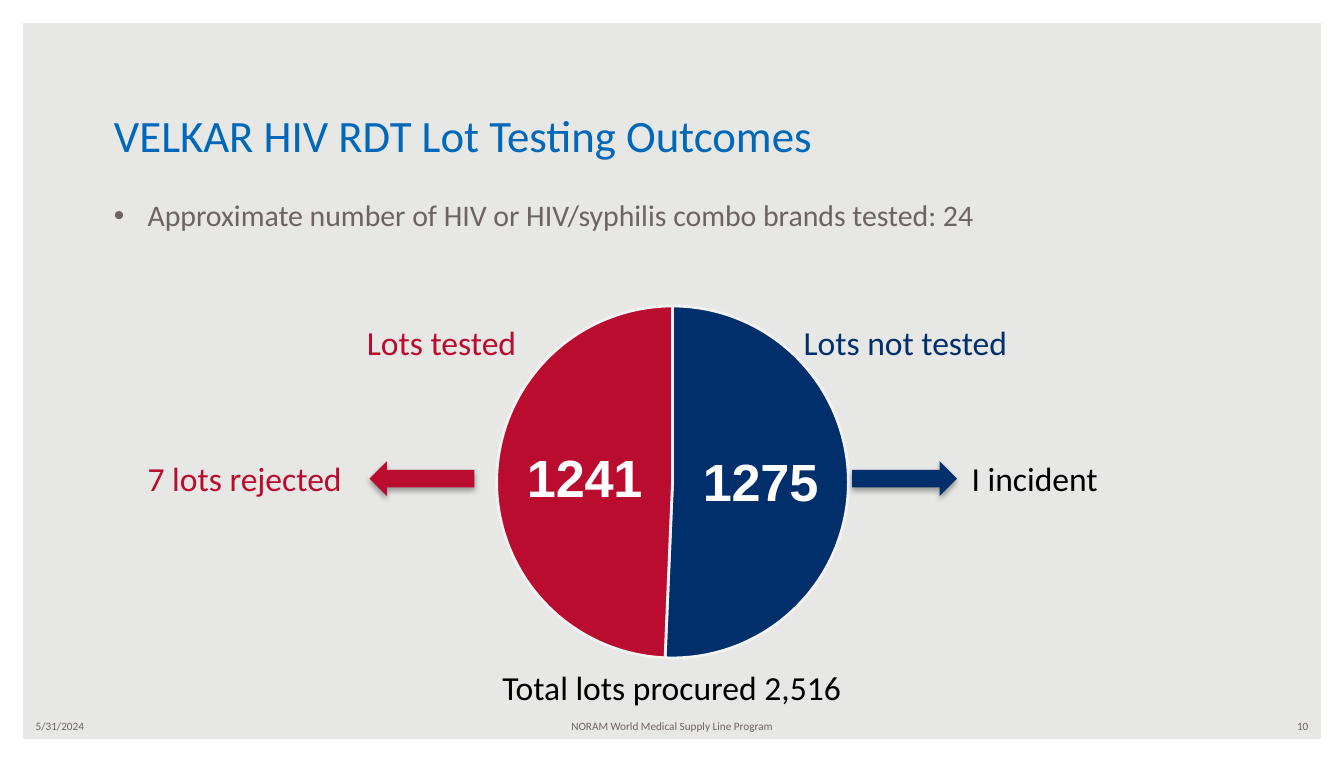
from lxml import etree
from pptx import Presentation
from pptx.chart.data import CategoryChartData
from pptx.dml.color import RGBColor
from pptx.enum.chart import XL_CHART_TYPE as ChartType, XL_LABEL_POSITION as LabelPos
from pptx.enum.shapes import MSO_SHAPE as Shape
from pptx.enum.text import MSO_ANCHOR as Anchor, PP_ALIGN as Align
from pptx.oxml import parse_xml
from pptx.oxml.ns import nsdecls, qn
from pptx.util import Pt

BLUE = RGBColor(0x00, 0x67, 0xB9)
NAVY = RGBColor(0x00, 0x2F, 0x6C)
RED = RGBColor(0xBA, 0x0C, 0x2F)
GREY = RGBColor(0x6C, 0x64, 0x63)
BLACK = RGBColor(0, 0, 0)
WHITE = RGBColor(0xFF, 0xFF, 0xFF)
PALE = RGBColor(0xF2, 0xF2, 0xF2)
BACKGROUND = RGBColor(0xE7, 0xE7, 0xE5)

# Content: lengths in points
WIDTH, HEIGHT = 720, 408
TITLE = "VELKAR HIV RDT Lot Testing Outcomes"
BULLET = "Approximate number of HIV or HIV/syphilis combo brands tested: 24"

LOTS = [("1", 1275, NAVY), ("2", 1241, RED), ("3", None, GREY), ("4", None, BLACK)]
CHART = (189, 138.6, 340.6, 238.3)
PIE_LAYOUT = {"x": 0.226, "y": 0.106, "w": 0.554, "h": 0.791}

# text, left, top, width, colour
CALLOUTS = [
    ("Lots not tested", 423.4, 168.8, 127.4, NAVY),
    ("Lots tested", 189.4, 168.8, 97.2, RED),
    ("7 lots rejected", 72, 241.7, 121, RED),
    ("I incident", 513.4, 241.7, 82, BLACK),
    ("Total lots procured 2,516", 262, 353.3, 201, BLACK),
]

# left, rotation, colour
ARROWS = [(216.7, 90, RED), (475.2, 270, NAVY)]
ARROW_TOP, ARROW_WIDTH, ARROW_HEIGHT = 228.2, 18.7, 56.2

# text, left, width, alignment
FOOTER = [
    ("5/31/2024", 12, 168, Align.LEFT),
    ("NORAM World Medical Supply Line Program", 246, 228, Align.CENTER),
    ("10", 540, 168, Align.RIGHT),
]

SHADOW = f"""<a:effectLst {nsdecls('a')}>
<a:outerShdw blurRad="39370" dist="22860" dir="5400000" rotWithShape="0">
<a:srgbClr val="000000"><a:alpha val="35000"/></a:srgbClr>
</a:outerShdw></a:effectLst>"""


def add_text(page, text, place, size, color, align=Align.LEFT, anchor=Anchor.TOP):
    box = page.shapes.add_textbox(*map(Pt, place))
    frame = box.text_frame
    frame.word_wrap = True
    frame.vertical_anchor = anchor
    frame.text = text
    para = frame.paragraphs[0]
    para.alignment = align
    font = para.runs[0].font
    font.name, font.size, font.color.rgb = "Calibri", Pt(size), color
    return para


def add_filled(page, kind, place, color):
    shape = page.shapes.add_shape(kind, *map(Pt, place))
    shape.shadow.inherit = False
    shape.fill.solid()
    shape.fill.fore_color.rgb = color
    shape.line.fill.background()
    return shape


def add_bullet(para, color):
    props = para._p.get_or_add_pPr()
    props.set("marL", str(Pt(18)))
    props.set("indent", str(-Pt(18)))
    bullet_color = etree.SubElement(props, qn("a:buClr"))
    etree.SubElement(bullet_color, qn("a:srgbClr"), val=str(color))
    etree.SubElement(props, qn("a:buFont"), typeface="Arial")
    etree.SubElement(props, qn("a:buChar"), char="•")


def add_pie(page):
    data = CategoryChartData()
    data.categories = [name for name, _, _ in LOTS]
    data.add_series("Series 1", [count for _, count, _ in LOTS])
    chart = page.shapes.add_chart(ChartType.PIE, *map(Pt, CHART), data).chart
    chart.has_legend = chart.has_title = False
    chart.font.name, chart.font.size = "Arial", Pt(10)
    chart.font.color.rgb = BLACK

    plot = chart.plots[0]
    plot.vary_by_categories = True
    for index, (_, _, color) in enumerate(LOTS):
        look = plot.series[0].points[index].format
        look.fill.solid()
        look.fill.fore_color.rgb = color
        look.line.color.rgb = PALE
        look.line.width = Pt(1.5)

    plot.has_data_labels = True
    labels = plot.data_labels
    labels.show_value = True
    labels.show_percentage = False
    labels.position = LabelPos.CENTER
    font = labels.font
    font.name, font.size, font.bold = "Arial", Pt(28), True
    font.color.rgb = WHITE

    # Fixed pie area inside the chart
    area = chart._chartSpace.chart.plotArea
    for old in area.findall(qn("c:layout")):
        area.remove(old)
    layout = etree.Element(qn("c:layout"))
    manual = etree.SubElement(layout, qn("c:manualLayout"))
    settings = {"layoutTarget": "inner", "xMode": "edge", "yMode": "edge", **PIE_LAYOUT}
    for tag, value in settings.items():
        etree.SubElement(manual, qn(f"c:{tag}"), val=str(value))
    area.insert(0, layout)


def main():
    deck = Presentation()
    deck.slide_width, deck.slide_height = Pt(WIDTH), Pt(HEIGHT)
    page = deck.slides.add_slide(deck.slide_layouts[6])
    page.background.fill.solid()
    page.background.fill.fore_color.rgb = BACKGROUND

    # White border
    border = add_filled(page, Shape.FRAME, (0, 0, WIDTH, HEIGHT), WHITE)
    border.adjustments[0] = 0.03

    # Heading and bullet
    add_text(page, TITLE, (54, 54, 612, 36), 24, BLUE, anchor=Anchor.BOTTOM)
    add_bullet(add_text(page, BULLET, (54, 102, 612, 252), 16, GREY), GREY)

    # Pie with its callouts and arrows
    add_pie(page)
    for text, left, top, width, color in CALLOUTS:
        add_text(page, text, (left, top, width, 29), 18, color)
    for left, rotation, color in ARROWS:
        place = (left, ARROW_TOP, ARROW_WIDTH, ARROW_HEIGHT)
        arrow = add_filled(page, Shape.DOWN_ARROW, place, color)
        arrow.rotation = rotation
        props = arrow._element.spPr
        props.replace(props.find(qn("a:effectLst")), parse_xml(SHADOW))

    # Footer
    for text, left, width, align in FOOTER:
        add_text(page, text, (left, 381.5, width, 14.4), 6, GREY, align, Anchor.MIDDLE)

    deck.save("out.pptx")


if __name__ == "__main__":
    main()
